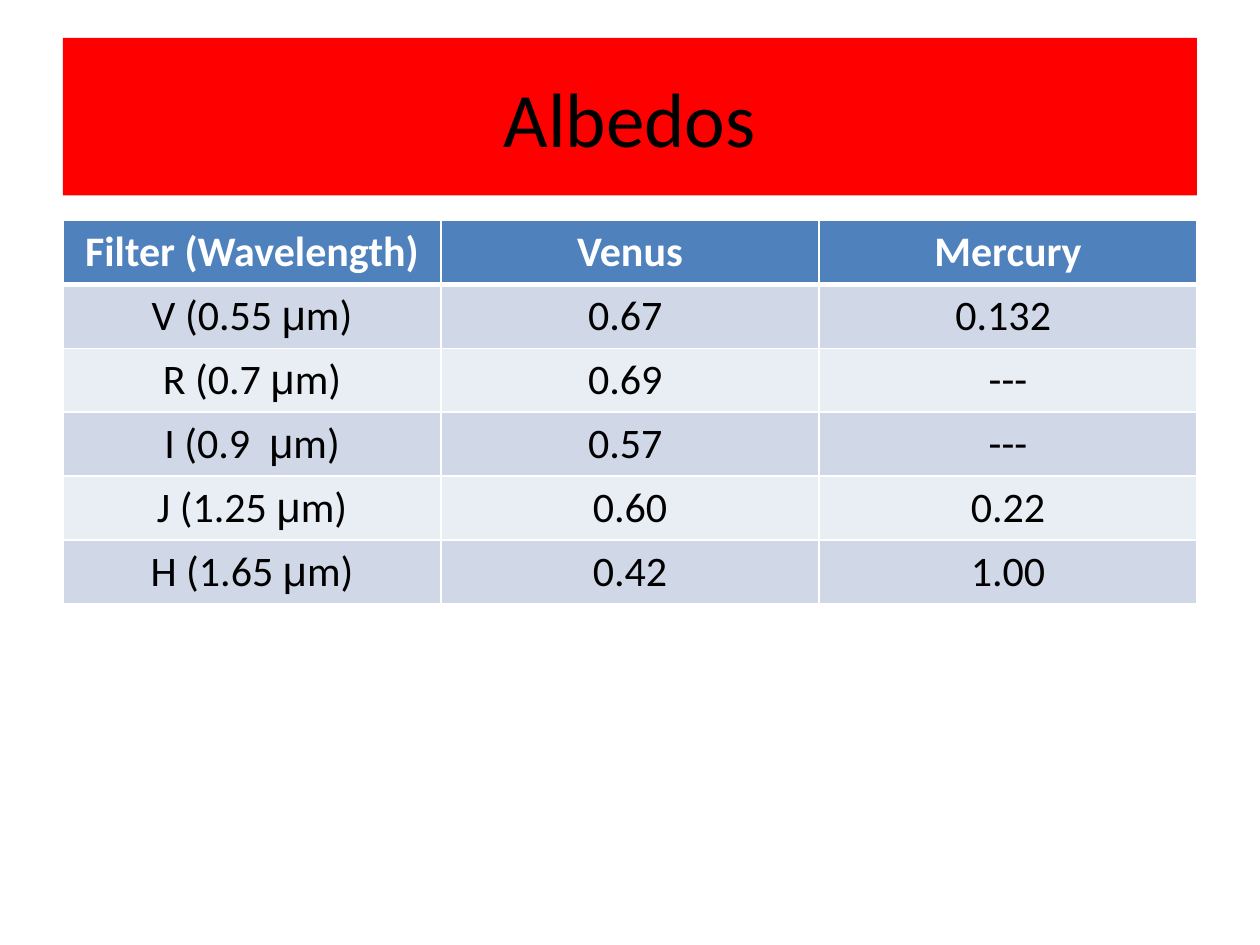
from dataclasses import dataclass

from lxml import etree
from pptx import Presentation
from pptx.dml.color import RGBColor
from pptx.enum.shapes import MSO_SHAPE
from pptx.enum.text import MSO_ANCHOR, PP_ALIGN
from pptx.oxml.ns import qn
from pptx.util import Inches, Pt

RECT = MSO_SHAPE.RECTANGLE
MIDDLE = MSO_ANCHOR.MIDDLE
CENTER = PP_ALIGN.CENTER

TITLE = "Albedos"
HEADS = ["Filter (Wavelength)", "Venus", "Mercury"]
ALBEDOS = [
    ("V (0.55 μm)", "0.67 ", "0.132 "),
    ("R (0.7 μm)", "0.69 ", "---"),
    ("I (0.9  μm)", "0.57 ", "---"),
    ("J (1.25 μm)", "0.60", "0.22"),
    ("H (1.65 μm)", "0.42", "1.00"),
]


@dataclass
class Theme:
    font: str = "Calibri"
    greek: str = "Arial"
    banner: str = "FF0000"
    head: str = "4F81BD"
    bands: tuple = ("D0D8E8", "E9EDF4")
    dark: str = "000000"
    light: str = "FFFFFF"
    title: int = 44
    body: int = 24
    rule: int = 1
    thick: int = 3


THEME = Theme()
WIDE, HIGH = 10, 7.5
EDGE = WIDE * 0.05
SPAN = WIDE - 2 * EDGE
BANNER_TOP, BANNER_HIGH = HIGH * 0.04, HIGH / 6
TABLE_TOP, ROW_HIGH = 1.75, 0.5


def paint(fill, color):
    fill.solid()
    fill.fore_color.rgb = RGBColor.from_string(color)


def write(para, text, size, color, bold=False):
    """Add centred runs, with the Greek letter mu in its own font."""
    para.alignment = CENTER
    before, mu, after = text.partition("μ")
    for part, font in ((before, THEME.font), (mu, THEME.greek),
                       (after, THEME.font)):
        if part:
            run = para.add_run()
            run.text = part
            run.font.name = font
            run.font.size = Pt(size)
            run.font.bold = bold
            run.font.color.rgb = RGBColor.from_string(color)


def border(cell, top, bottom):
    props = cell._tc.get_or_add_tcPr()
    widths = {"L": THEME.rule, "R": THEME.rule, "T": top, "B": bottom}
    for side, width in widths.items():
        line = etree.SubElement(props, qn(f"a:ln{side}"), w=str(Pt(width)))
        fill = etree.SubElement(line, qn("a:solidFill"))
        etree.SubElement(fill, qn("a:srgbClr"), val=THEME.light)


def add_title(slide):
    box = slide.shapes.add_shape(RECT, Inches(EDGE), Inches(BANNER_TOP),
                                 Inches(SPAN), Inches(BANNER_HIGH))
    box.shadow.inherit = False
    box.line.fill.background()
    paint(box.fill, THEME.banner)
    frame = box.text_frame
    frame.word_wrap = True
    frame.vertical_anchor = MIDDLE
    write(frame.paragraphs[0], TITLE, THEME.title, THEME.dark)


def add_grid(slide):
    rows = [HEADS, *ALBEDOS]
    grid = slide.shapes.add_table(
        len(rows), len(HEADS), Inches(EDGE), Inches(TABLE_TOP),
        Inches(SPAN), Inches(ROW_HIGH * len(rows))).table
    for r, row in enumerate(rows):
        head = r == 0
        back = THEME.head if head else THEME.bands[(r - 1) % 2]
        color = THEME.light if head else THEME.dark
        top = THEME.thick if r == 1 else THEME.rule
        bottom = THEME.thick if head else THEME.rule
        for c, text in enumerate(row):
            cell = grid.cell(r, c)
            border(cell, top, bottom)
            paint(cell.fill, back)
            write(cell.text_frame.paragraphs[0], text, THEME.body, color, head)


def main():
    deck = Presentation()
    deck.slide_width, deck.slide_height = Inches(WIDE), Inches(HIGH)
    slide = deck.slides.add_slide(deck.slide_layouts[6])
    paint(slide.background.fill, THEME.light)
    add_title(slide)
    add_grid(slide)
    deck.save("out.pptx")


if __name__ == "__main__":
    main()
